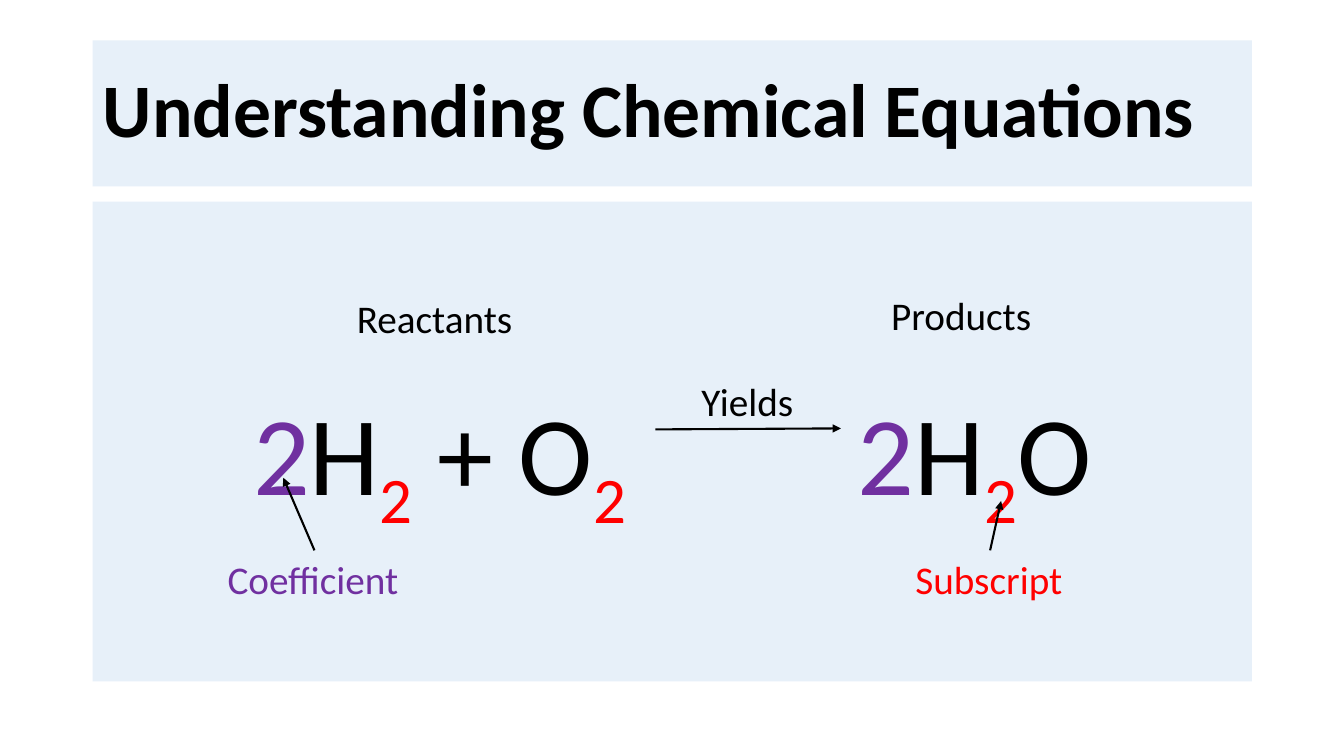
from lxml.etree import SubElement
from pptx import Presentation
from pptx.dml.color import RGBColor
from pptx.enum.shapes import MSO_CONNECTOR, MSO_SHAPE
from pptx.enum.text import MSO_ANCHOR, MSO_AUTO_SIZE, PP_ALIGN
from pptx.oxml.ns import qn
from pptx.util import Inches, Pt

COLORS = {"panel": "DEEBF7", "text": "000000", "coefficient": "7030A0", "subscript": "FF0000"}

presentation = Presentation()
presentation.slide_width, presentation.slide_height = Inches(13.33), Inches(7.5)
slide = presentation.slides.add_slide(presentation.slide_layouts[5])
shapes = slide.shapes


def share(*percents):
    """Turn alternating horizontal and vertical percentages into slide lengths."""
    sides = (presentation.slide_width, presentation.slide_height)
    return [int(sides[i % 2] * percent / 100) for i, percent in enumerate(percents)]


def add_run(paragraph, text, size, color="text", bold=False):
    run = paragraph.add_run()
    run.text = text
    for name, value in {"name": "Calibri", "size": Pt(size), "bold": bold}.items():
        setattr(run.font, name, value)
    run.font.color.rgb = RGBColor.from_string(COLORS[color])
    return run


# Title and equation panels
title = shapes.title
title.left, title.top, title.width, title.height = share(6.9, 5.33, 86.25, 19.33)
panel = shapes.add_shape(MSO_SHAPE.RECTANGLE, *share(6.9, 26.67, 86.25, 63.47))
panel.shadow.inherit = False
for shape in (title, panel):
    shape.fill.solid()
    shape.fill.fore_color.rgb = RGBColor.from_string(COLORS["panel"])
    shape.line.fill.background()
    fill_color = shape.fill._xPr.find(qn("a:solidFill"))[0]
    SubElement(fill_color, qn("a:alpha"), val="70000")
    shape.text_frame.word_wrap = True

title.text_frame.vertical_anchor = MSO_ANCHOR.MIDDLE
heading = title.text_frame.paragraphs[0]
heading.alignment = PP_ALIGN.LEFT
heading.line_spacing = 0.9
add_run(heading, "Understanding Chemical Equations", 54, bold=True)

# Equation, with a tab stop where the products begin
panel.text_frame.vertical_anchor = MSO_ANCHOR.TOP
panel.text_frame.margin_top = Inches(1.8)
equation = panel.text_frame.paragraphs[0]
equation.alignment = PP_ALIGN.CENTER
tab_list = SubElement(equation._p.get_or_add_pPr(), qn("a:tabLst"))
SubElement(tab_list, qn("a:tab"), pos=str(Inches(6)), algn="l")
for text, color in [
    ("2", "coefficient"), ("H", "text"), ("2", "subscript"), (" + O", "text"),
    ("2\t", "subscript"), ("2", "coefficient"), ("H", "text"), ("2", "subscript"), ("O", "text"),
]:
    run = add_run(equation, text, 80, color)
    if color == "subscript":
        run.font._element.set("baseline", "-25000")

# Labels: left, top, width
labels = {}
for text, color, left, top, width in [
    ("Coefficient", "coefficient", 16.2, 72.8, 14.4),
    ("Subscript", "subscript", 67.37, 72.8, 12.6),
    ("Reactants", "text", 25.81, 38.27, 13.2),
    ("Products", "text", 65.57, 37.87, 12.08),
    ("Yields", "text", 51.46, 49.2, 8.4),
]:
    labels[text] = shapes.add_textbox(*share(left, top, width, 7.6))
    frame = labels[text].text_frame
    frame.word_wrap = False
    frame.auto_size = MSO_AUTO_SIZE.SHAPE_TO_FIT_TEXT
    add_run(frame.paragraphs[0], text, 28, color)

# Arrows: start, end, label they rise from
for start, end, label in [
    ((48.76, 56.8), (62.57, 56.67), None),
    ((23.4, 72.8), (21.08, 63.2), "Coefficient"),
    ((73.67, 72.8), (74.49, 66.27), "Subscript"),
]:
    arrow = shapes.add_connector(MSO_CONNECTOR.STRAIGHT, *share(*start, *end))
    if label:
        arrow.begin_connect(labels[label], 0)
    arrow.line.width = Pt(1.5)
    arrow.line.color.rgb = RGBColor.from_string(COLORS["text"])
    SubElement(arrow.line._get_or_add_ln(), qn("a:tailEnd"), type="triangle")
    SubElement(arrow._element.spPr, qn("a:effectLst"))

presentation.save("out.pptx")
